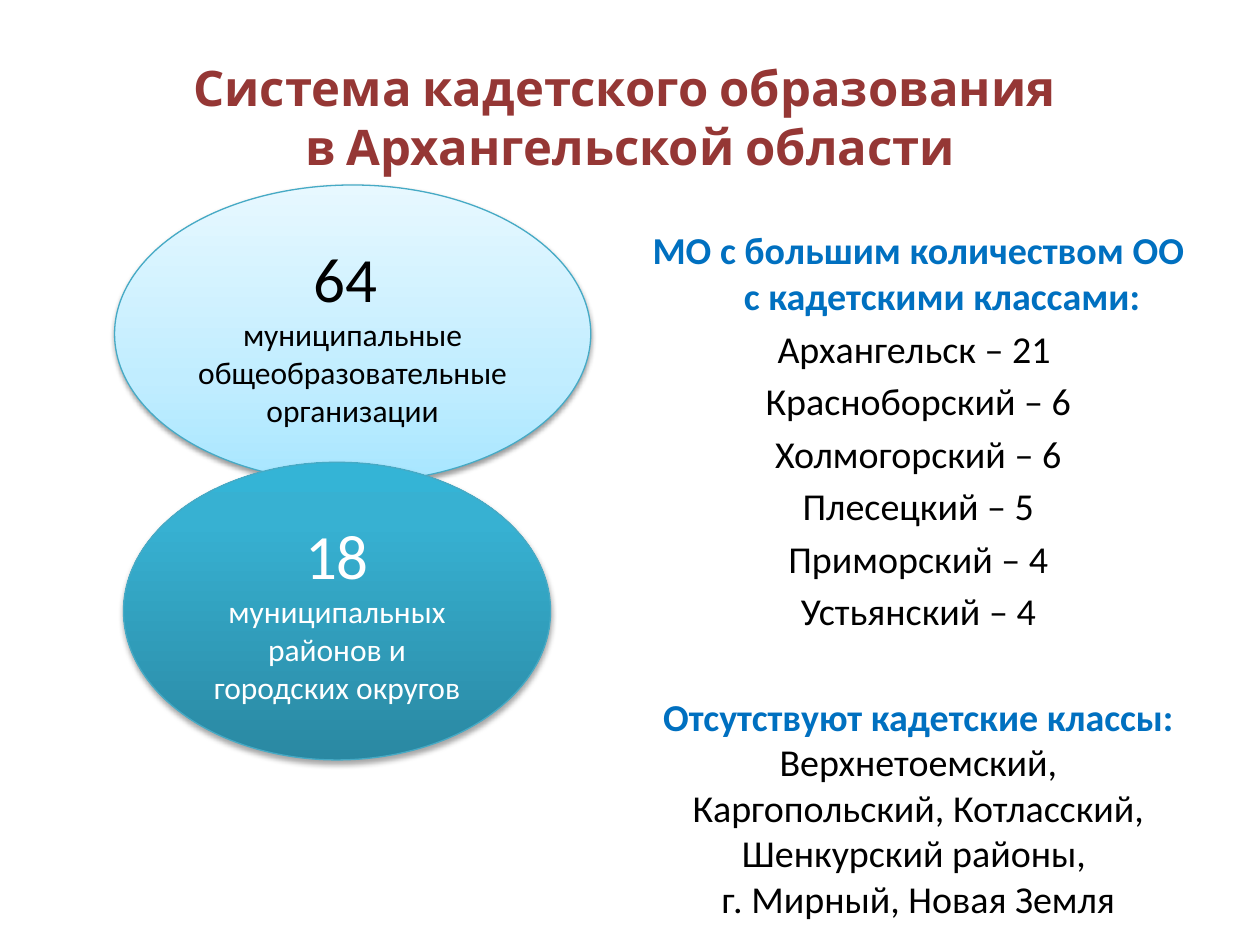
from pptx import Presentation
from pptx.dml.color import RGBColor as Rgb
from pptx.enum.shapes import MSO_SHAPE as Shape
from pptx.enum.text import MSO_ANCHOR as Anchor, MSO_AUTO_SIZE as Fit, PP_ALIGN as Align
from pptx.oxml import parse_xml
from pptx.oxml.ns import nsdecls
from pptx.util import Cm, Pt

RED = Rgb(0x95, 0x37, 0x35)
BLUE = Rgb(0x00, 0x70, 0xC0)
BLACK = Rgb(0x00, 0x00, 0x00)
WHITE = Rgb(0xFF, 0xFF, 0xFF)
TEAL = Rgb(0x46, 0xAA, 0xC5)
LIGHT = [(0, Rgb(0xA7, 0xE6, 0xFF)), (35, Rgb(0xC1, 0xED, 0xFF)), (100, Rgb(0xE7, 0xF8, 0xFF))]
DARK = [(0, Rgb(0x2A, 0x88, 0xA2)), (80, Rgb(0x37, 0xB1, 0xD2)), (100, Rgb(0x34, 0xB4, 0xD6))]

COUNTS = [("Архангельск", "21 "), ("Красноборский", 6), ("Холмогорский", 6),
          ("Плесецкий", 5), ("Приморский", 4), ("Устьянский", 4)]


def style(para, size, color, bold=False, face="Calibri"):
    para.alignment = Align.CENTER
    for run in para.runs:
        font = run.font
        font.name, font.size, font.bold = face, Pt(size), bold
        font.color.rgb = color


def add_title(slide, text):
    title = slide.shapes.title
    title.left, title.top, title.width, title.height = Cm(1.27), Cm(0.76), Cm(22.86), Cm(3.18)
    frame = title.text_frame
    frame.text = text
    frame.vertical_anchor = Anchor.MIDDLE
    frame.auto_size = Fit.NONE
    style(frame.paragraphs[0], 28, RED, True, "Cabin")


def paint(shape, stops, alpha, dist):
    """Fill from bottom to top through all stops, with a soft shadow below."""
    marks = "".join(f'<a:gs pos="{pos * 1000}"><a:srgbClr val="{color}"/></a:gs>'
                    for pos, color in stops)
    fill = parse_xml(f'<a:gradFill {nsdecls("a")} rotWithShape="1"><a:gsLst>{marks}</a:gsLst>'
                     '<a:lin ang="16200000" scaled="0"/></a:gradFill>')
    shade = parse_xml(f'<a:effectLst {nsdecls("a")}><a:outerShdw blurRad="{Pt(3.1)}" '
                      f'dist="{Pt(dist)}" dir="5400000" rotWithShape="0"><a:srgbClr val="000000">'
                      f'<a:alpha val="{alpha * 1000}"/></a:srgbClr></a:outerShdw></a:effectLst>')
    shape.line.color.rgb = TEAL
    shape.line.width = Pt(0.75)
    line = shape.line._ln
    line.addprevious(fill)
    line.addnext(shade)


def add_oval(slide, left, top, width, number, label, color, stops, alpha, dist):
    oval = slide.shapes.add_shape(Shape.FLOWCHART_CONNECTOR, Cm(left), Cm(top), Cm(width), Cm(6))
    paint(oval, stops, alpha, dist)
    frame = oval.text_frame
    frame.word_wrap = True
    frame.vertical_anchor = Anchor.MIDDLE
    frame.text = f"{number}\n{label}"
    for para, size in zip(frame.paragraphs, (36, 18)):
        style(para, size, color)


def add_line(frame, text, color=BLACK, bold=False, gap=4, hang=False):
    """Add a centred paragraph; gap is the space before it in points."""
    para = frame.add_paragraph() if frame.text else frame.paragraphs[0]
    para.text = text
    para.space_before = Pt(gap)
    style(para, 21.7, color, bold)
    if hang:
        props = para._p.get_or_add_pPr()
        props.set("marL", str(Cm(0.95)))
        props.set("indent", str(-Cm(0.95)))


def add_list(slide):
    box = slide.shapes.add_textbox(Cm(12.9), Cm(4.45), Cm(11.23), Cm(12.57))
    frame = box.text_frame
    frame.word_wrap = True
    add_line(frame, "МО с большим количеством ОО с кадетскими классами:", BLUE, True, hang=True)
    for place, count in COUNTS:
        add_line(frame, f"{place} – {count}", hang=place != "Архангельск")
    add_line(frame, "Отсутствуют кадетские классы:", BLUE, True, gap=34)
    add_line(frame, "Верхнетоемский, Каргопольский, Котласский, Шенкурский районы, \v"
                    "г. Мирный, Новая Земля", gap=0)


def main():
    deck = Presentation()
    deck.slide_width, deck.slide_height = Cm(25.4), Cm(19.05)
    slide = deck.slides.add_slide(deck.slide_layouts[5])
    add_title(slide, "Система кадетского образования \vв Архангельской области")
    add_list(slide)
    add_oval(slide, 2.31, 3.73, 9.6, "64 ", "муниципальные общеобразовательные организации",
             BLACK, LIGHT, 38, 1.6)
    add_oval(slide, 2.49, 9.32, 8.61, "18", "муниципальных районов и городских округов",
             WHITE, DARK, 35, 1.8)
    deck.save("out.pptx")


if __name__ == "__main__":
    main()
